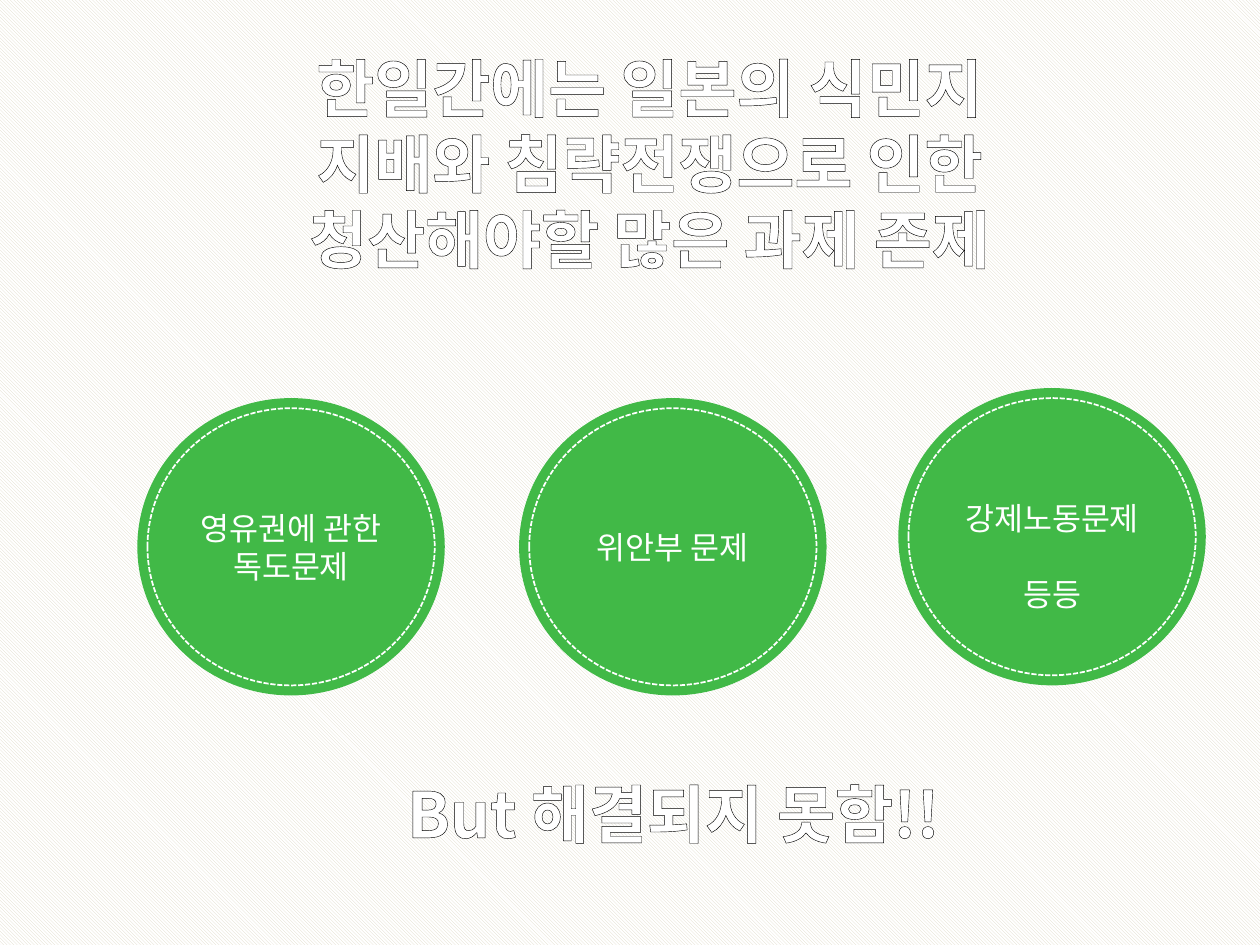
from lxml import etree
from pptx import Presentation
from pptx.dml.color import RGBColor
from pptx.enum.dml import MSO_LINE, MSO_PATTERN
from pptx.enum.shapes import MSO_SHAPE
from pptx.enum.text import MSO_ANCHOR, MSO_AUTO_SIZE, PP_ALIGN
from pptx.oxml.ns import qn
from pptx.util import Inches, Pt

ELLIPSE = MSO_SHAPE.OVAL
CENTER = PP_ALIGN.CENTER
MIDDLE = MSO_ANCHOR.MIDDLE
GROW = MSO_AUTO_SIZE.SHAPE_TO_FIT_TEXT
DASH = MSO_LINE.SQUARE_DOT
DIAGONAL = MSO_PATTERN.LIGHT_DOWNWARD_DIAGONAL

FONT = "Noto Sans CJK KR"
WHITE, BLACK, GREEN, BEIGE = "FFFFFF", "000000", "41B947", "DDD9C3"

HEADLINES = [
    ("한일간에는 일본의 식민지 지배와 침략전쟁으로 인한 청산해야할 많은 과제 존제", 1.77, 0.34, 1.31),
    ("But 해결되지 못함!!", 1.96, 6.1, 0.71),
]
HEADLINE_W = 6.77

ISSUES = [
    (["위안부 문제"], 4.12, 3.16, 0.05),
    (["영유권에 관한 독도문제"], 1.09, 3.16, 0.05),
    (["강제노동문제", "등등"], 7.13, 3.08, 0.35),
]
DISC_W, DISC_H, RING_GAP = 2.44, 2.36, 0.08
LINE_GAP = 21.6


def rgb(value):
    return RGBColor.from_string(value)


def add_text(p, text, size, bold=False):
    p.alignment = CENTER
    r = p.add_run()
    r.text = text
    r.font.size, r.font.bold, r.font.name = Pt(size), bold, FONT
    r.font.color.rgb = rgb(WHITE)
    rpr = r.font._element
    ea = etree.Element(qn("a:ea"), typeface=FONT)
    rpr.find(qn("a:latin")).addnext(ea)
    return rpr


def add_outline(rpr, color, width):
    ln = etree.Element(qn("a:ln"), w=str(int(Pt(width))))
    fill = etree.SubElement(ln, qn("a:solidFill"))
    etree.SubElement(fill, qn("a:srgbClr"), val=color)
    rpr.insert(0, ln)


def add_headline(s, text, x, y, h):
    tf = s.shapes.add_textbox(Inches(x), Inches(y), Inches(HEADLINE_W), Inches(h)).text_frame
    tf.word_wrap = True
    tf.auto_size = GROW
    add_outline(add_text(tf.paragraphs[0], text, 36, True), BLACK, 0.1)


def add_ellipse(group, x, y, w, h):
    sp = group.shapes.add_shape(ELLIPSE, Inches(x), Inches(y), Inches(w), Inches(h))
    sp.shadow.inherit = False
    return sp


def add_issue(s, lines, x, y, inset):
    group = s.shapes.add_group_shape()
    disc = add_ellipse(group, x, y, DISC_W, DISC_H)
    disc.fill.solid()
    disc.fill.fore_color.rgb = rgb(GREEN)
    disc.line.fill.background()
    tf = disc.text_frame
    tf.word_wrap = True
    tf.vertical_anchor = MIDDLE
    tf.margin_top = Inches(inset)
    for i, text in enumerate(lines):
        p = tf.add_paragraph() if i else tf.paragraphs[0]
        if i:
            p.space_before = Pt(LINE_GAP)
        add_text(p, text, 18)

    ring = add_ellipse(group, x + RING_GAP, y + RING_GAP, DISC_W - 2 * RING_GAP, DISC_H - 2 * RING_GAP)
    ring.fill.background()
    ring.line.color.rgb = rgb(WHITE)
    ring.line.width = Pt(1)
    ring.line.dash_style = DASH


prs = Presentation()
prs.slide_width, prs.slide_height = Inches(10), Inches(7.5)
s = prs.slides.add_slide(prs.slide_layouts[6])
bg = s.background.fill
bg.patterned()
bg.pattern = DIAGONAL
bg.fore_color.rgb = rgb(BEIGE)
bg.back_color.rgb = rgb(WHITE)

add_headline(s, *HEADLINES[0])
for issue in ISSUES:
    add_issue(s, *issue)
add_headline(s, *HEADLINES[1])

prs.save("out.pptx")
